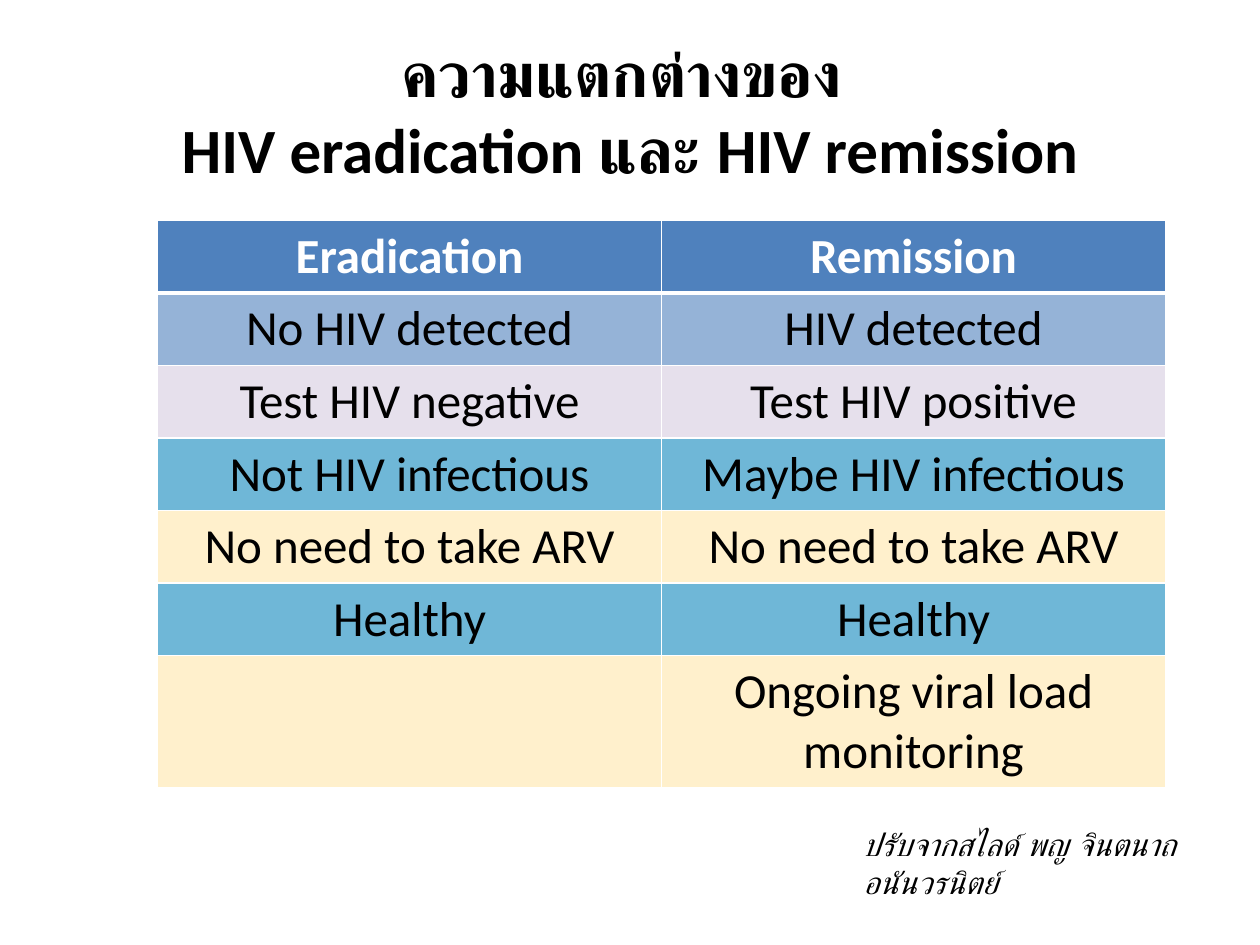
from dataclasses import dataclass

from lxml.etree import SubElement
from pptx import Presentation
from pptx.dml.color import RGBColor
from pptx.enum.text import MSO_ANCHOR, PP_ALIGN
from pptx.oxml.ns import qn
from pptx.util import Pt

TITLE = "ความแตกต่างของ \vHIV eradication และ HIV remission"
CREDIT = "ปรับจากสไลด์ พญ จินตนาถ อนันวรนิตย์"
HEADER = ("Eradication", "Remission")
COMPARISON = [
    ("No HIV detected", "HIV detected"),
    ("Test HIV negative", "Test HIV positive"),
    ("Not HIV infectious", "Maybe HIV infectious"),
    ("No need to take ARV", "No need to take ARV"),
    ("Healthy", "Healthy"),
    ("", "Ongoing viral load monitoring"),
]


@dataclass(frozen=True)
class Theme:
    font: str = "Calibri"
    text: str = "000000"
    light: str = "FFFFFF"
    header: str = "4F81BD"
    rows: tuple = ("95B3D7", "E6E0EC", "6FB7D7", "FFF0CC", "6FB7D7", "FFF0CC")
    title_size: int = 36
    table_size: int = 28
    credit_size: int = 18


THEME = Theme()
EMU_PER_PX = 9144  # 100 px to the inch
SLIDE_SIZE = (1000, 750)
TITLE_BOX = (50, 25, 900, 125)
TABLE_BOX = (125, 175, 800, 297)
CREDIT_BOX = (675, 650, 301, 40)
HEADER_HEIGHT, ROW_HEIGHT = 45, 42


def px(*lengths):
    return [length * EMU_PER_PX for length in lengths]


def style(paragraph, size, color=THEME.text, bold=False, italic=False):
    font = paragraph.font
    font.name, font.size = THEME.font, Pt(size)
    font.bold, font.italic = bold, italic
    font.color.rgb = RGBColor.from_string(color)


def add_borders(cell, bottom_width):
    """Draw light lines on all four sides, before the fill is set."""
    properties = cell._tc.get_or_add_tcPr()
    for side in "LRTB":
        width = bottom_width if side == "B" else 1
        line = SubElement(properties, qn(f"a:ln{side}"), w=str(Pt(width)))
        fill = SubElement(line, qn("a:solidFill"))
        SubElement(fill, qn("a:srgbClr"), val=THEME.light)


def fill_row(table, index, texts, color, text_color, is_header):
    table.rows[index].height = px(HEADER_HEIGHT if is_header else ROW_HEIGHT)[0]
    for column, text in enumerate(texts):
        cell = table.cell(index, column)
        add_borders(cell, 3 if is_header else 1)
        cell.fill.solid()
        cell.fill.fore_color.rgb = RGBColor.from_string(color)
        cell.text = text
        paragraph = cell.text_frame.paragraphs[0]
        paragraph.alignment = PP_ALIGN.CENTER
        style(paragraph, THEME.table_size, text_color, bold=is_header)


def add_title(slide):
    title = slide.shapes.title
    title.left, title.top, title.width, title.height = px(*TITLE_BOX)
    title.text_frame.text = TITLE
    title.text_frame.vertical_anchor = MSO_ANCHOR.MIDDLE
    paragraph = title.text_frame.paragraphs[0]
    paragraph.alignment = PP_ALIGN.CENTER
    style(paragraph, THEME.title_size, bold=True)


def add_comparison(slide):
    table = slide.shapes.add_table(
        len(COMPARISON) + 1, len(HEADER), *px(*TABLE_BOX)).table
    fill_row(table, 0, HEADER, THEME.header, THEME.light, True)
    for index, (texts, color) in enumerate(zip(COMPARISON, THEME.rows), 1):
        fill_row(table, index, texts, color, THEME.text, False)


def add_credit(slide):
    frame = slide.shapes.add_textbox(*px(*CREDIT_BOX)).text_frame
    frame.word_wrap = True
    frame.text = CREDIT
    style(frame.paragraphs[0], THEME.credit_size, italic=True)


def main():
    presentation = Presentation()
    presentation.slide_width, presentation.slide_height = px(*SLIDE_SIZE)
    slide = presentation.slides.add_slide(presentation.slide_layouts[5])
    add_title(slide)
    add_comparison(slide)
    add_credit(slide)
    presentation.save("out.pptx")


if __name__ == "__main__":
    main()
